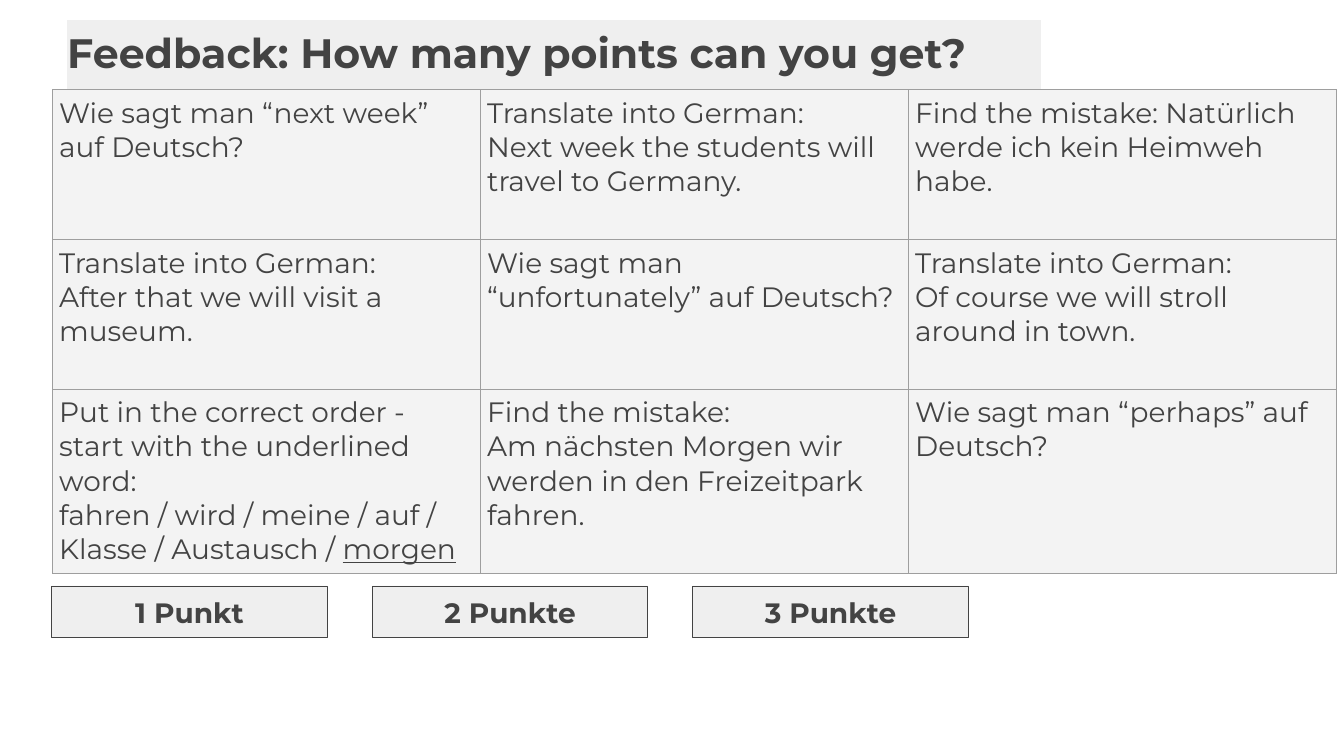
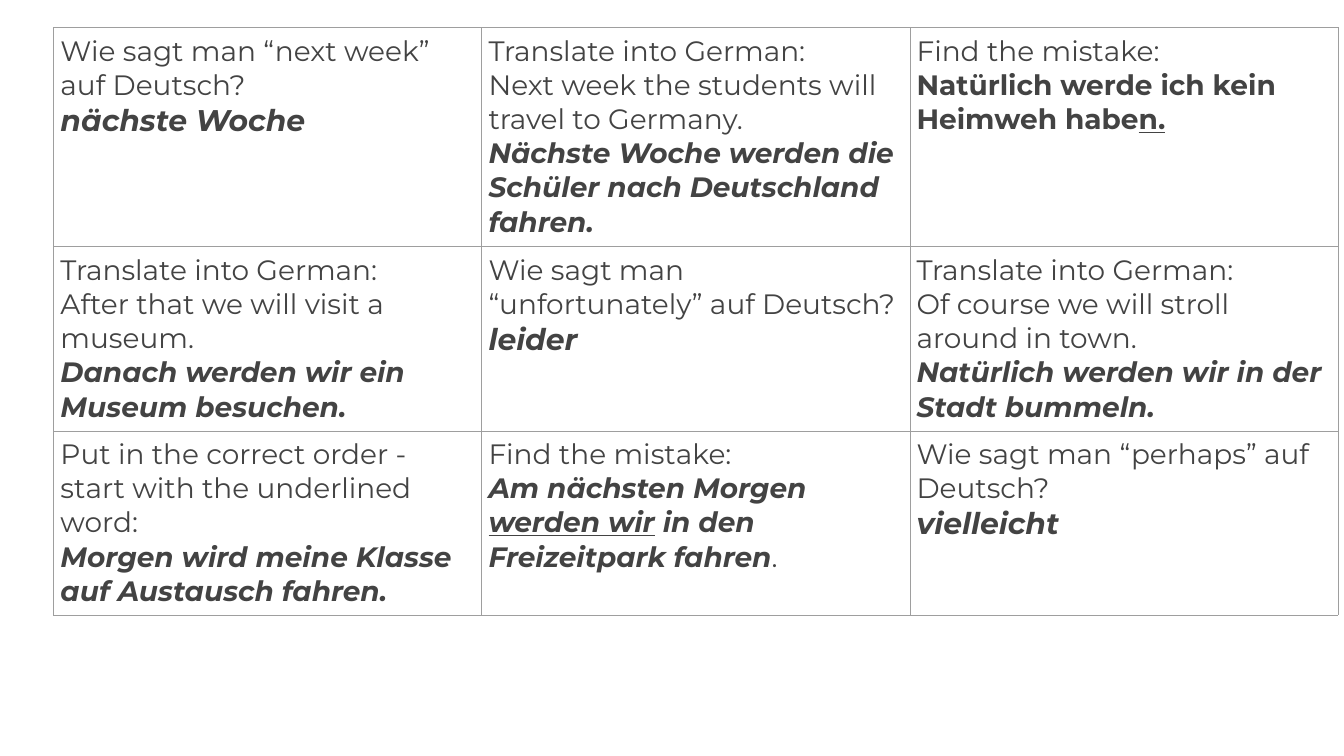
from lxml import etree
from pptx import Presentation
from pptx.dml.color import RGBColor
from pptx.enum.shapes import MSO_SHAPE
from pptx.enum.text import MSO_ANCHOR, MSO_AUTO_SIZE, PP_ALIGN
from pptx.oxml.ns import qn
from pptx.util import Inches, Pt

RECTANGLE = MSO_SHAPE.RECTANGLE
TOP, MIDDLE = MSO_ANCHOR.TOP, MSO_ANCHOR.MIDDLE
LEFT, CENTER = PP_ALIGN.LEFT, PP_ALIGN.CENTER
NO_AUTOFIT = MSO_AUTO_SIZE.NONE

WIDTH, HEIGHT = Inches(20), Inches(11.25)
PADDING = Inches(0.1)
THIN = Pt(0.75)
TITLE_ONLY, BLANK = 5, 6

COLORS = {
    "ink": "434343",
    "band": "EFEFEF",
    "question": "F3F3F3",
    "answer": "FFFFFF",
    "border": "9E9E9E",
}

BASE = {"name": "Montserrat", "size": Pt(30), "bold": False, "italic": False}
STYLES = {
    "plain": BASE,
    "underlined": {**BASE, "underline": True},
    "bold": {**BASE, "bold": True},
    "bold_underlined": {**BASE, "bold": True, "underline": True},
    "solution": {**BASE, "bold": True, "italic": True},
    "solution_underlined": {**BASE, "bold": True, "italic": True, "underline": True},
    "word": {**BASE, "size": Pt(32), "bold": True, "italic": True},
    "title": {**BASE, "size": Pt(44), "bold": True},
}

NEXT_WEEK = [("Wie sagt man “next week” auf Deutsch?", "plain")]
STUDENTS = [("Translate into German:\nNext week the students will travel to Germany.", "plain")]
MUSEUM = [("Translate into German:\nAfter that we will visit a museum.", "plain")]
UNFORTUNATELY = [("Wie sagt man “unfortunately” auf Deutsch?", "plain")]
STROLL = [("Translate into German:\nOf course we will stroll around in town.", "plain")]
PERHAPS = [("Wie sagt man “perhaps” auf Deutsch?", "plain")]
ORDER = ("Put in the correct order - start with the underlined word:\n", "plain")
MISTAKE = ("Find the mistake:\n", "plain")

QUESTIONS = [
    [
        [NEXT_WEEK],
        [STUDENTS],
        [[("Find the mistake: Natürlich werde ich kein Heimweh habe.", "plain")]],
    ],
    [[MUSEUM], [UNFORTUNATELY], [STROLL]],
    [
        [[ORDER, ("fahren / wird / meine / auf / Klasse / Austausch / ", "plain"),
          ("morgen", "underlined")]],
        [[MISTAKE, ("Am nächsten Morgen wir werden in den Freizeitpark fahren.", "plain")]],
        [PERHAPS],
    ],
]

ANSWERS = [
    [
        [NEXT_WEEK, [("nächste Woche", "word")]],
        [STUDENTS, [("Nächste Woche werden die Schüler nach Deutschland fahren.", "solution")]],
        [[MISTAKE, ("Natürlich werde ich kein Heimweh habe", "bold"),
          ("n.", "bold_underlined")]],
    ],
    [
        [MUSEUM + [("\nDanach werden wir ein Museum besuchen.", "solution")]],
        [UNFORTUNATELY, [("leider", "word")]],
        [STROLL, [("Natürlich werden wir in der Stadt bummeln.", "solution")]],
    ],
    [
        [[ORDER, ("Morgen wird meine Klasse auf Austausch fahren.", "solution")]],
        [[MISTAKE, ("Am nächsten Morgen ", "solution"),
          ("werden wir", "solution_underlined"),
          (" in den Freizeitpark fahren", "solution"), (".", "plain")]],
        [PERHAPS, [("vielleicht", "word")]],
    ],
]

POINTS = ["1 Punkt", "2 Punkte", "3 Punkte"]


def across(percent):
    return round(WIDTH * percent / 100)


def down(percent):
    return round(HEIGHT * percent / 100)


def paint(fill, color):
    fill.solid()
    fill.fore_color.rgb = RGBColor.from_string(COLORS[color])


def set_margins(target, margin):
    for side in ("left", "top", "right", "bottom"):
        setattr(target, f"margin_{side}", margin)


def write_run(paragraph, text, style):
    for index, line in enumerate(text.split("\n")):
        if index:
            paragraph.add_line_break()
        if line:
            run = paragraph.add_run()
            run.text = line
            for attribute, value in STYLES[style].items():
                setattr(run.font, attribute, value)
            run.font.color.rgb = RGBColor.from_string(COLORS["ink"])


def write(frame, paragraphs, align=LEFT):
    for index, runs in enumerate(paragraphs):
        paragraph = frame.add_paragraph() if index else frame.paragraphs[0]
        paragraph.alignment = align
        for text, style in runs:
            write_run(paragraph, text, style)


def outline_cell(cell):
    properties = cell._tc.get_or_add_tcPr()
    for edge in ("a:lnL", "a:lnR", "a:lnT", "a:lnB"):
        line = etree.SubElement(properties, qn(edge), w=str(THIN))
        fill = etree.SubElement(line, qn("a:solidFill"))
        etree.SubElement(fill, qn("a:srgbClr"), val=COLORS["border"])


def add_heading(slide, text, box):
    heading = slide.shapes.title
    heading.left, heading.top, heading.width, heading.height = box
    paint(heading.fill, "band")
    frame = heading.text_frame
    set_margins(frame, 0)
    for attribute, value in {
        "word_wrap": True, "auto_size": NO_AUTOFIT, "vertical_anchor": TOP,
    }.items():
        setattr(frame, attribute, value)
    write(frame, [[(text, "title")]])
    frame.paragraphs[0].line_spacing = 1.15


def add_quiz(slide, tasks, left, top, row_shares, color):
    heights = [down(share) for share in row_shares]
    column_width = across(31.85)
    columns = len(tasks[0])
    quiz = slide.shapes.add_table(
        len(tasks), columns, left, top, column_width * columns, sum(heights)
    ).table
    quiz.first_row = quiz.horz_banding = False
    for column in quiz.columns:
        column.width = column_width
    for row, height, row_tasks in zip(quiz.rows, heights, tasks):
        row.height = height
        for cell, task in zip(row.cells, row_tasks):
            set_margins(cell, PADDING)
            outline_cell(cell)
            paint(cell.fill, color)
            write(cell.text_frame, task)


def add_points(slide, labels, box):
    left, top, width, height = box
    label_width = across(20.5)
    pitch = (width - label_width) // (len(labels) - 1)
    for index, label in enumerate(labels):
        points = slide.shapes.add_shape(
            RECTANGLE, left + index * pitch, top, label_width, height
        )
        points.shadow.inherit = False
        paint(points.fill, "band")
        paint(points.line.fill, "ink")
        points.line.width = THIN
        frame = points.text_frame
        set_margins(frame, PADDING)
        frame.word_wrap = True
        frame.vertical_anchor = MIDDLE
        write(frame, [[(label, "bold")]], CENTER)


def build_questions(deck):
    slide = deck.slides.add_slide(deck.slide_layouts[TITLE_ONLY])
    add_heading(
        slide, "Feedback: How many points can you get?",
        (across(5), down(2.67), across(72.45), down(15.82)),
    )
    add_quiz(slide, QUESTIONS, across(3.9), down(11.82), (19.82, 19.82, 24.36), "question")
    add_points(slide, POINTS, (across(3.85), down(77.51), across(68.2), down(6.84)))


def build_answers(deck):
    slide = deck.slides.add_slide(deck.slide_layouts[BLANK])
    add_quiz(slide, ANSWERS, across(4), down(3.64), (28.98, 24.36, 24.36), "answer")


def main():
    deck = Presentation()
    deck.slide_width, deck.slide_height = WIDTH, HEIGHT
    build_questions(deck)
    build_answers(deck)
    deck.save("out.pptx")


if __name__ == "__main__":
    main()
